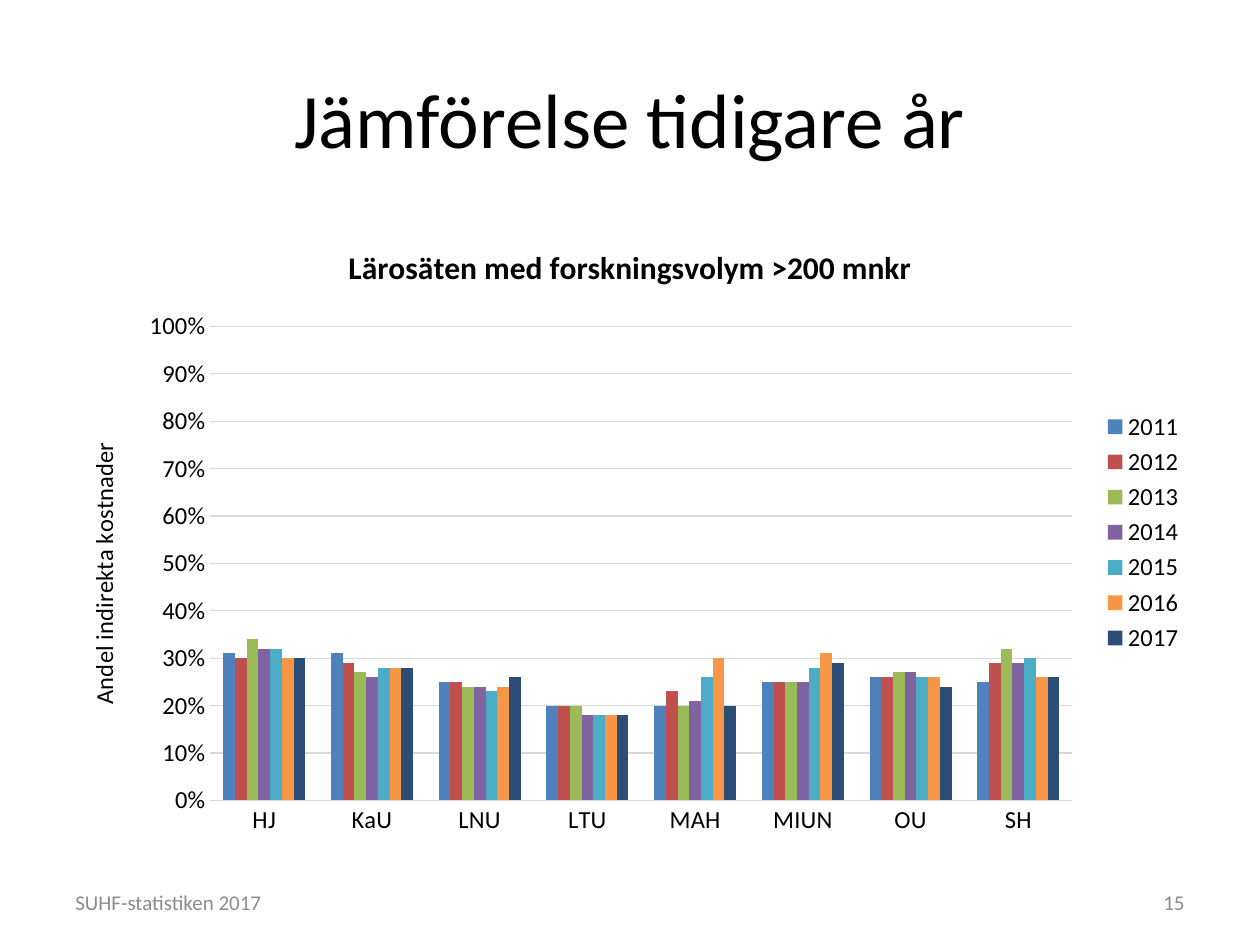
from pptx import Presentation
from pptx.chart.data import CategoryChartData
from pptx.dml.color import RGBColor
from pptx.enum.chart import XL_CHART_TYPE as ChartType, XL_LEGEND_POSITION as LegendSide, XL_TICK_MARK as Tick
from pptx.enum.text import MSO_ANCHOR as Anchor, PP_ALIGN as Align
from pptx.oxml import parse_xml
from pptx.oxml.ns import nsdecls, qn
from pptx.util import Inches, Pt

THEME = {
    "font": "Calibri",
    "ink": "000000", "muted": "8C8C8C", "rule": "D9D9D9",
    "heading": 44, "chart_title": 18, "label": 14, "footer": 12,
    "years": ["4F81BD", "C0504D", "9BBB59", "8064A2", "4BACC6", "F79646", "2C4D75"],
}

deck = Presentation()
deck.slide_width, deck.slide_height = Inches(10), Inches(7.5)
WIDTH, HEIGHT = deck.slide_width, deck.slide_height
slide = deck.slides.add_slide(deck.slide_layouts[6])


def style(font, size, color=THEME["ink"], bold=False):
    font.name, font.size, font.bold = THEME["font"], Pt(size), bold
    font.color.rgb = RGBColor.from_string(color)


def write(text, left, top, width, height, align=Align.LEFT, **look):
    box = slide.shapes.add_textbox(int(left * WIDTH), int(top * HEIGHT),
                                   int(width * WIDTH), int(height * HEIGHT))
    frame = box.text_frame
    frame.word_wrap = True
    frame.vertical_anchor = Anchor.MIDDLE
    line = frame.paragraphs[0]
    line.alignment = align
    run = line.add_run()
    run.text = text
    style(run.font, **look)


universities = ["HJ", "KaU", "LNU", "LTU", "MAH", "MIUN", "OU", "SH"]
overhead_shares = {
    "2011": [0.31, 0.31, 0.25, 0.2, 0.2, 0.25, 0.26, 0.25],
    "2012": [0.3, 0.29, 0.25, 0.2, 0.23, 0.25, 0.26, 0.29],
    "2013": [0.34, 0.27, 0.24, 0.2, 0.2, 0.25, 0.27, 0.32],
    "2014": [0.32, 0.26, 0.24, 0.18, 0.21, 0.25, 0.27, 0.29],
    "2015": [0.32, 0.28, 0.23, 0.18, 0.26, 0.28, 0.26, 0.3],
    "2016": [0.3, 0.28, 0.24, 0.18, 0.3, 0.31, 0.26, 0.26],
    "2017": [0.3, 0.28, 0.26, 0.18, 0.2, 0.29, 0.24, 0.26],
}
comparison = CategoryChartData(number_format="0%")
comparison.categories = universities
for year, shares in overhead_shares.items():
    comparison.add_series(year, shares)

chart = slide.shapes.add_chart(
    ChartType.COLUMN_CLUSTERED, int(0.05 * WIDTH), Inches(1.75),
    int(0.9 * WIDTH), int(0.66 * HEIGHT), comparison).chart
style(chart.font, THEME["label"])

bars = chart.plots[0]
bars.gap_width, bars.overlap, bars.vary_by_categories = 219, 0, False
for year_bars, color in zip(bars.series, THEME["years"]):
    year_bars.invert_if_negative = False
    year_bars.format.fill.solid()
    year_bars.format.fill.fore_color.rgb = RGBColor.from_string(color)

chart.has_legend = True
chart.legend.position = LegendSide.RIGHT
chart.legend.include_in_layout = False
style(chart.legend.font, THEME["label"])

universities_axis, share_axis = chart.category_axis, chart.value_axis
for axis in (universities_axis, share_axis):
    axis.major_tick_mark = axis.minor_tick_mark = Tick.NONE
    style(axis.tick_labels.font, THEME["label"])
share_axis.minimum_scale, share_axis.maximum_scale, share_axis.major_unit = 0, 1, 0.1
share_axis.tick_labels.number_format = "0%"
share_axis.tick_labels.number_format_is_linked = False
share_axis.has_major_gridlines = True
share_axis.format.line.fill.background()
for rule in (universities_axis.format.line, share_axis.major_gridlines.format.line):
    rule.color.rgb = RGBColor.from_string(THEME["rule"])
    rule.width = Pt(0.75)

for owner, caption, size, bold in (
        (chart, "Lärosäten med forskningsvolym >200 mnkr", THEME["chart_title"], True),
        (share_axis, "Andel indirekta kostnader", THEME["label"], False)):
    owner.has_title = True
    title_frame = (owner.chart_title if owner is chart else owner.axis_title).text_frame
    title_frame.text = caption
    style(title_frame.paragraphs[0].runs[0].font, size, bold=bold)

plot_area = chart._chartSpace.chart.plotArea
for automatic in plot_area.findall(qn("c:layout")):
    plot_area.remove(automatic)
plot_area.insert(0, parse_xml(
    f'<c:layout {nsdecls("c")}><c:manualLayout><c:layoutTarget val="inner"/>'
    '<c:xMode val="edge"/><c:yMode val="edge"/><c:x val="0.13"/><c:y val="0.17"/>'
    '<c:w val="0.76"/><c:h val="0.76"/></c:manualLayout></c:layout>'))

write("Jämförelse tidigare år", 0.05, 0.04, 0.9, 0.17, align=Align.CENTER, size=THEME["heading"])
footer = {"top": 0.93, "height": 0.05, "size": THEME["footer"], "color": THEME["muted"]}
write("SUHF-statistiken 2017", left=0.05, width=0.44, **footer)
write("15", left=0.72, width=0.23, align=Align.RIGHT, **footer)

deck.save("out.pptx")
